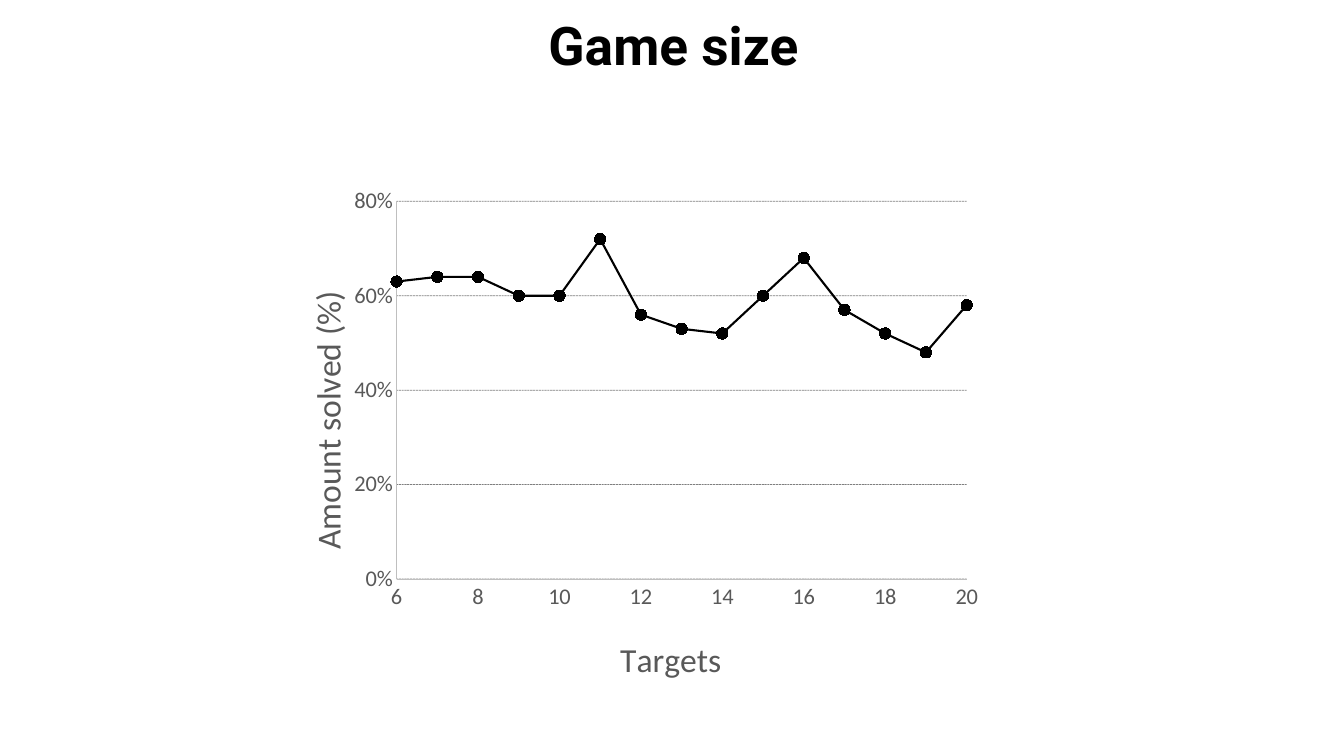
from lxml import etree
from pptx import Presentation
from pptx.chart.data import XyChartData
from pptx.dml.color import RGBColor
from pptx.enum.chart import XL_CHART_TYPE, XL_MARKER_STYLE, XL_TICK_MARK
from pptx.enum.dml import MSO_LINE
from pptx.enum.text import MSO_ANCHOR, MSO_AUTO_SIZE, PP_ALIGN
from pptx.oxml import parse_xml
from pptx.oxml.ns import nsdecls, qn
from pptx.util import Inches, Pt

COLORS = {"ink": "000000", "label": "595959", "axis": "BFBFBF"}
SOLVED = [0.63, 0.64, 0.64, 0.6, 0.6, 0.72, 0.56, 0.53, 0.52, 0.6,
          0.68, 0.57, 0.52, 0.48, 0.58]


def set_font(font, name, size, color, bold=False):
    values = {"name": name, "size": Pt(size), "bold": bold}
    for key, value in values.items():
        setattr(font, key, value)
    font.color.rgb = RGBColor.from_string(COLORS[color])


def make_layout(x, y, size=None):
    """Return a manual chart layout in fractions of the chart area."""
    places = {"x": x, "y": y}
    inner = ""
    if size:
        places.update(w=size[0], h=size[1])
        inner = '<c:layoutTarget val="inner"/>'
    modes = '<c:xMode val="edge"/><c:yMode val="edge"/>'
    values = "".join(f'<c:{k} val="{v}"/>' for k, v in places.items())
    return parse_xml(f'<c:layout {nsdecls("c")}><c:manualLayout>{inner}{modes}'
                     f'{values}</c:manualLayout></c:layout>')


prs = Presentation()
prs.slide_width, prs.slide_height = Inches(13.33), Inches(7.5)
s = prs.slides.add_slide(prs.slide_layouts[5])

# Title
title = s.shapes.title
title.left, title.top = Inches(2.01), Inches(0.14)
title.width, title.height = Inches(9.34), Inches(0.67)
tf = title.text_frame
tf.text = "Game size"
tf.word_wrap = True
tf.auto_size = MSO_AUTO_SIZE.SHAPE_TO_FIT_TEXT
tf.vertical_anchor = MSO_ANCHOR.MIDDLE
p = tf.paragraphs[0]
p.alignment = PP_ALIGN.CENTER
p.line_spacing = 0.9
set_font(p.runs[0].font, "Roboto", 38, "ink", True)

# Scatter chart
data = XyChartData()
points = data.add_series("Series 1")
for target, share in enumerate(SOLVED, start=6):
    points.add_data_point(target, share)
chart = s.shapes.add_chart(XL_CHART_TYPE.XY_SCATTER_LINES, Inches(2.52), Inches(1.67),
                           Inches(7.44), Inches(5.28), data).chart
chart.has_legend = False
chart.has_title = False
set_font(chart.font, "Calibri", 10, "ink")
plot = chart.plots[0]
plot.vary_by_categories = False
plot_area = chart.element.find(".//" + qn("c:plotArea"))
for old in plot_area.findall(qn("c:layout")):
    plot_area.remove(old)
plot_area.insert(0, make_layout(0.19, 0.062, (0.76, 0.71)))

# Series
series = plot.series[0]
series.smooth = False
series.format.line.width = Pt(1.5)
series.format.line.color.rgb = RGBColor.from_string(COLORS["ink"])
marker = series.marker
marker.style, marker.size = XL_MARKER_STYLE.CIRCLE, 8
marker.format.fill.solid()
marker.format.fill.fore_color.rgb = RGBColor.from_string(COLORS["ink"])
marker.format.line.color.rgb = RGBColor.from_string(COLORS["ink"])

# Axes: title, number format, scale, title place
for axis, name, number_format, scale, place in [
    (chart.category_axis, "Targets", "General", (6, 20, 2), (0.48, 0.87)),
    (chart.value_axis, "Amount solved (%)", "0%", (0, 0.8, 0.2), (0.06, 0.22)),
]:
    axis.minimum_scale, axis.maximum_scale, axis.major_unit = scale
    axis.major_tick_mark = axis.minor_tick_mark = XL_TICK_MARK.NONE
    axis.has_major_gridlines = False
    axis.tick_labels.number_format = number_format
    axis.tick_labels.number_format_is_linked = False
    set_font(axis.tick_labels.font, "Calibri", 16, "label")
    axis.format.line.width = Pt(0.75)
    axis.format.line.color.rgb = RGBColor.from_string(COLORS["axis"])
    tf = axis.axis_title.text_frame
    tf.text = name
    set_font(tf.paragraphs[0].runs[0].font, "Calibri", 24, "label")
    title_xml = axis.axis_title._element
    for old in title_xml.findall(qn("c:layout")):
        title_xml.remove(old)
    title_xml.find(qn("c:tx")).addnext(make_layout(*place))

body = chart.value_axis.axis_title.text_frame._txBody.find(qn("a:bodyPr"))
body.set("rot", "-5400000")
body.set("vert", "horz")

# Half-transparent dashed gridlines
grid = chart.value_axis.major_gridlines
grid.format.line.width = Pt(0.5)
grid.format.line.dash_style = MSO_LINE.SQUARE_DOT
grid.format.line.color.rgb = RGBColor.from_string(COLORS["ink"])
grid_xml = chart.element.find(".//" + qn("c:majorGridlines"))
grid_xml.find(".//" + qn("a:prstDash")).set("val", "sysDash")
etree.SubElement(grid_xml.find(".//" + qn("a:srgbClr")), qn("a:alpha"), val="50000")

prs.save("out.pptx")
